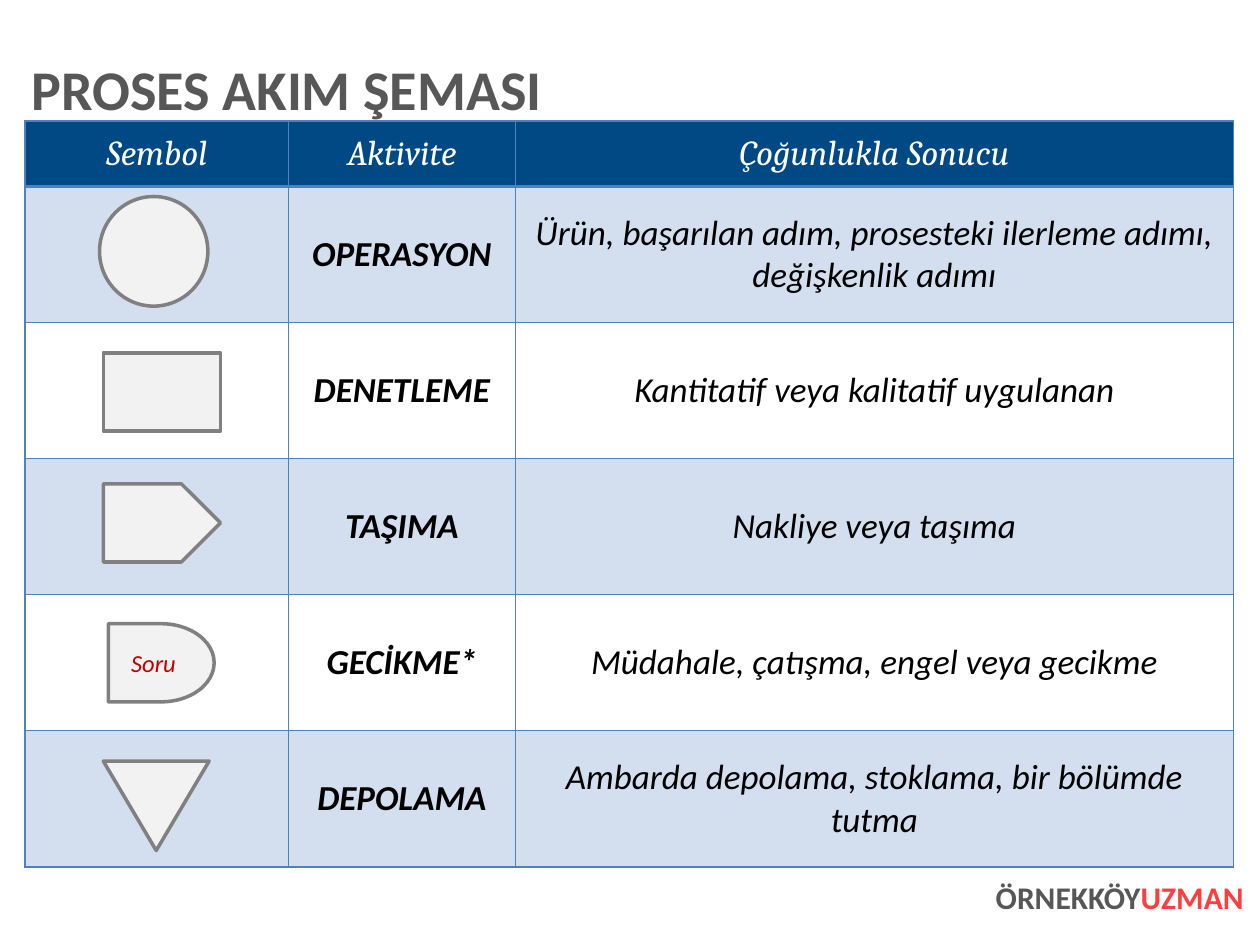
from lxml.etree import SubElement
from pptx import Presentation
from pptx.dml.color import RGBColor as RGB
from pptx.enum.shapes import MSO_SHAPE as SHAPE
from pptx.enum.text import MSO_ANCHOR as ANCHOR, PP_ALIGN as ALIGN
from pptx.oxml.ns import qn
from pptx.util import Inches as In, Pt

TITLE = "PROSES AKIM ŞEMASI"
FOOTER = ("ÖRNEKKÖY", "UZMAN")
HEADER = ("Sembol", "Aktivite", "Çoğunlukla Sonucu")
STEPS = [
    ("OPERASYON", "Ürün, başarılan adım, prosesteki ilerleme adımı, değişkenlik adımı"),
    ("DENETLEME", "Kantitatif veya kalitatif uygulanan"),
    ("TAŞIMA", "Nakliye veya taşıma"),
    ("GECİKME*", "Müdahale, çatışma, engel veya gecikme"),
    ("DEPOLAMA", "Ambarda depolama, stoklama, bir bölümde tutma"),
]
SYMBOLS = [
    (SHAPE.OVAL, 0.79, 0.08, 0.86, 0.87, ""),
    (SHAPE.RECTANGLE, 0.82, 0.24, 0.93, 0.62, ""),
    (SHAPE.PENTAGON, 0.82, 0.2, 0.93, 0.62, ""),
    (SHAPE.FLOWCHART_DELAY, 0.86, 0.23, 0.84, 0.62, "Soru"),
    (SHAPE.FLOWCHART_MERGE, 0.82, 0.24, 0.84, 0.71, ""),
]
WIDTH, HEIGHT = 10, 7.5
LEFT, TOP = 0.2, 0.96
COLS = (2.09, 1.8, 5.7)
HEAD_H, ROW_H = 0.52, 1.08

THEME = {
    "border": "4F81BD", "head": "004985", "band": "D3DFEE",
    "symbol": "F2F2F2", "outline": "808080",
    "title": dict(name="Calibri", size=32, color="575757", bold=True),
    "footer": dict(name="Calibri", size=18, color="575757", bold=True),
    "accent": dict(name="Calibri", size=18, color="FB3E3E", bold=True),
    "header": dict(name="Cambria", size=20, color="FFFFFF", bold=False, italic=True),
    "activity": dict(name="Calibri", size=20, color="000000", bold=True, italic=True),
    "result": dict(name="Calibri", size=20, color="000000", bold=False, italic=True),
    "question": dict(name="Calibri", size=14, color="C00000", italic=True),
}


def add_run(p, text, style):
    r = p.add_run()
    r.text = text
    for key, value in THEME[style].items():
        if key == "color":
            r.font.color.rgb = RGB.from_string(value)
        else:
            setattr(r.font, key, Pt(value) if key == "size" else value)


def add_text(s, box, runs, align, anchor, pad=0):
    tf = s.shapes.add_textbox(*map(In, box)).text_frame
    formats = dict(word_wrap=True, vertical_anchor=anchor, margin_left=0,
                   margin_right=0, margin_top=In(pad), margin_bottom=In(pad))
    for key, value in formats.items():
        setattr(tf, key, value)
    p = tf.paragraphs[0]
    p.alignment = align
    for text, style in runs:
        add_run(p, text, style)
    return p


def set_borders(cell, widths):
    tc_pr = cell._tc.get_or_add_tcPr()
    for side, width in zip("LRTB", widths):
        ln = SubElement(tc_pr, qn(f"a:ln{side}"), w=str(Pt(width)))
        fill = SubElement(ln, qn("a:solidFill"))
        SubElement(fill, qn("a:srgbClr"), val=THEME["border"])


def fill_cell(cell, row, col, text):
    set_borders(cell, (1, 1, 2.25 if row == 1 else 1, 2.25 if row == 0 else 1))
    if row % 2 or row == 0:
        cell.fill.solid()
        cell.fill.fore_color.rgb = RGB.from_string(THEME["band" if row else "head"])
    else:
        cell.fill.background()
    formats = dict(vertical_anchor=ANCHOR.MIDDLE, margin_left=In(0.04),
                   margin_right=In(0.04), margin_top=0, margin_bottom=0)
    for key, value in formats.items():
        setattr(cell, key, value)
    if text:
        p = cell.text_frame.paragraphs[0]
        p.alignment = ALIGN.CENTER
        add_run(p, text, ("activity", "result")[col - 1] if row else "header")


def add_grid(s):
    rows = [HEADER] + [("", *step) for step in STEPS]
    box = (LEFT, TOP, sum(COLS), HEAD_H + ROW_H * len(STEPS))
    table = s.shapes.add_table(len(rows), len(COLS), *map(In, box)).table
    table.horz_banding = table.first_row = False
    for col, width in enumerate(COLS):
        table.columns[col].width = In(width)
    for i, row in enumerate(rows):
        table.rows[i].height = In(ROW_H if i else HEAD_H)
        for j, text in enumerate(row):
            fill_cell(table.cell(i, j), i, j, text)


def add_symbols(s):
    for i, (kind, x, dy, w, h, text) in enumerate(SYMBOLS):
        y = TOP + HEAD_H + i * ROW_H + dy
        sp = s.shapes.add_shape(kind, *map(In, (x, y, w, h)))
        sp.shadow.inherit = False
        sp.fill.solid()
        sp.fill.fore_color.rgb = RGB.from_string(THEME["symbol"])
        sp.line.color.rgb = RGB.from_string(THEME["outline"])
        sp.line.width = Pt(2)
        if text:
            sp.text_frame.vertical_anchor = ANCHOR.MIDDLE
            p = sp.text_frame.paragraphs[0]
            p.alignment = ALIGN.CENTER
            add_run(p, text, "question")


def main():
    prs = Presentation()
    prs.slide_width, prs.slide_height = In(WIDTH), In(HEIGHT)
    s = prs.slides.add_slide(prs.slide_layouts[6])
    add_text(s, (7.56, 6.97, 2.31, 0.56), zip(FOOTER, ("footer", "accent")),
             ALIGN.RIGHT, ANCHOR.TOP)
    add_grid(s)
    p = add_text(s, (0.25, 0.38, 9.64, 0.71), [(TITLE, "title")],
                 ALIGN.LEFT, ANCHOR.MIDDLE, 0.05)
    p.line_spacing = 0.9
    add_symbols(s)
    prs.save("out.pptx")


if __name__ == "__main__":
    main()
